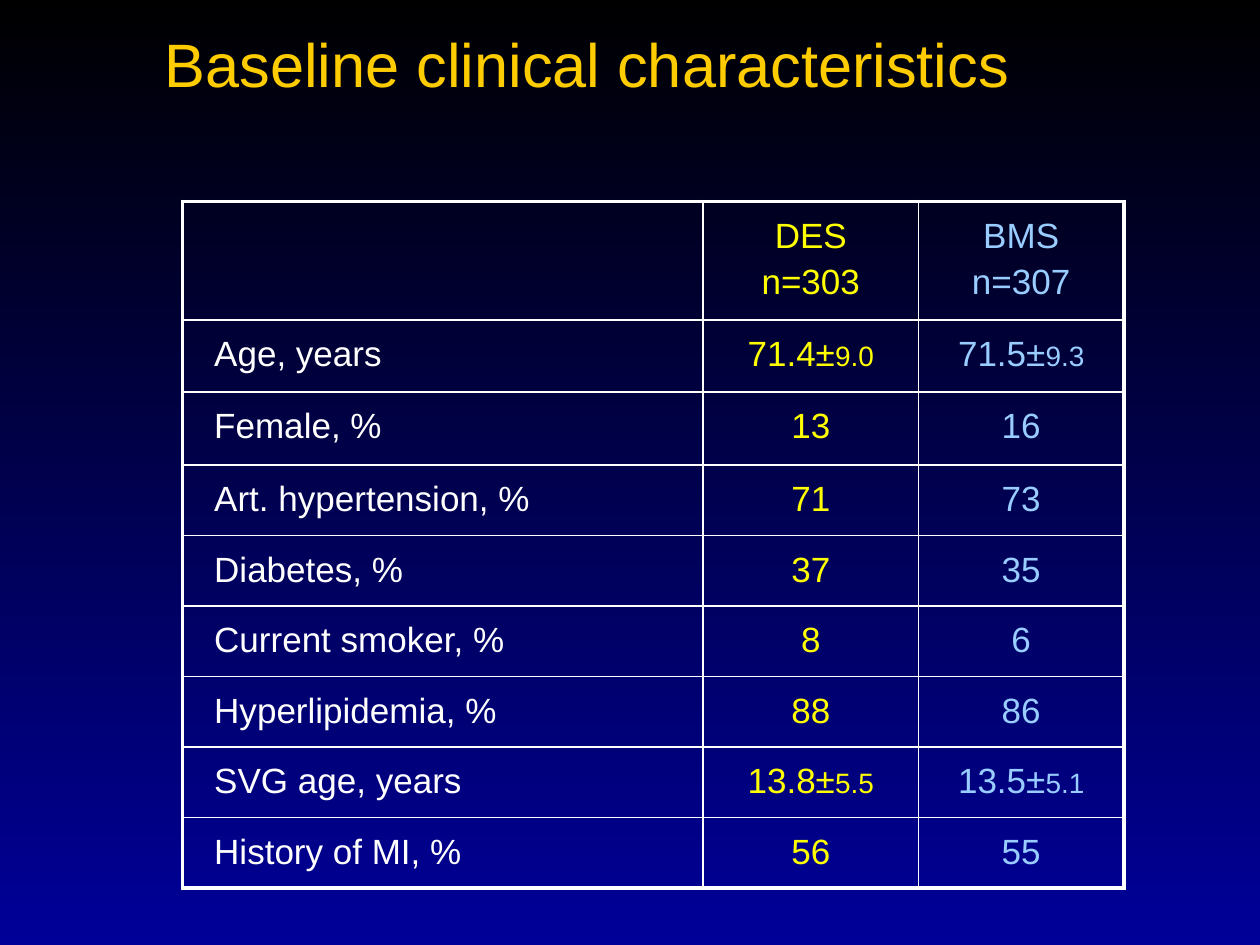
from dataclasses import dataclass

from lxml import etree
from pptx import Presentation
from pptx.dml.color import RGBColor
from pptx.enum import text as t
from pptx.oxml import ns
from pptx.util import Inches, Pt

WHITE, YELLOW, BLUE, GOLD = "FFFFFF", "FFFF00", "99CCFF", "FFCC00"


@dataclass
class Row:
    label: str
    des: str
    bms: str
    high: float = 0.56


ROWS = [
    Row("", "DES\nn=303", "BMS\nn=307", 0.94),
    Row("Age, years", "71.4±9.0", "71.5±9.3", 0.57),
    Row("Female, %", "13", "16", 0.58),
    Row("Art. hypertension, %", "71", "73"),
    Row("Diabetes, %", "37", "35"),
    Row("Current smoker, %", "8", "6"),
    Row("Hyperlipidemia, %", "88", "86"),
    Row("SVG age, years", "13.8±5.5", "13.5±5.1"),
    Row("History of MI, %", "56", "55"),
]
WIDTHS = [4.13, 1.71, 1.63]
TINTS = [WHITE, YELLOW, BLUE]


def color(code: str) -> RGBColor:
    return RGBColor.from_string(code)


def style(font, size: float, code: str) -> None:
    font.name = "Arial"
    font.size = Pt(size)
    font.color.rgb = color(code)


def border(cell, outer: dict) -> None:
    props = cell._tc.get_or_add_tcPr()
    for spot, (side, edge) in enumerate(outer.items()):
        line = etree.Element(ns.qn(f"a:ln{side}"), w=str(Pt(2.25 if edge else 1)))
        fill = etree.SubElement(line, ns.qn("a:solidFill"))
        etree.SubElement(fill, ns.qn("a:srgbClr"), val=WHITE)
        props.insert(spot, line)


def write(cell, words: str, code: str, align) -> None:
    cell.margin_left = cell.margin_right = Inches(0.25)
    cell.margin_top = cell.margin_bottom = Inches(0.12)
    frame = cell.text_frame
    main, sign, spread = words.partition("±")
    frame.text = main + sign
    for spot, para in enumerate(frame.paragraphs):
        para.alignment = align
        if spot:
            para.space_before = Pt(4)
        style(para.font, 20, code)
        for run in para.runs:
            style(run.font, 20, code)
    if spread:
        run = frame.paragraphs[0].add_run()
        run.text = spread
        style(run.font, 16, code)


def draw_table(slide) -> None:
    frame = slide.shapes.add_table(
        len(ROWS), len(WIDTHS), Inches(1.45), Inches(1.6),
        Inches(sum(WIDTHS)), Inches(sum(row.high for row in ROWS)))
    table = frame.table
    table.first_row = table.horz_banding = False
    for col, width in zip(table.columns, WIDTHS):
        col.width = Inches(width)
    for y, row in enumerate(ROWS):
        table.rows[y].height = Inches(row.high)
        for x, words in enumerate([row.label, row.des, row.bms]):
            cell = table.cell(y, x)
            cell.fill.background()
            align = t.PP_ALIGN.CENTER if x else t.PP_ALIGN.LEFT
            write(cell, words, TINTS[x], align)
            border(cell, {"L": x == 0, "R": x == len(WIDTHS) - 1,
                          "T": y == 0, "B": y == len(ROWS) - 1})


def draw_title(slide) -> None:
    title = slide.shapes.title
    title.left, title.top = Inches(0.44), Inches(0.13)
    title.width, title.height = Inches(8.44), Inches(0.74)
    frame = title.text_frame
    frame.text = "Baseline clinical characteristics"
    frame.auto_size = t.MSO_AUTO_SIZE.NONE
    frame.vertical_anchor = t.MSO_ANCHOR.MIDDLE
    para = frame.paragraphs[0]
    para.alignment = t.PP_ALIGN.CENTER
    style(para.runs[0].font, 35, GOLD)


def main() -> None:
    deck = Presentation()
    deck.slide_width, deck.slide_height = Inches(10), Inches(7.5)
    slide = deck.slides.add_slide(deck.slide_layouts[5])
    fill = slide.background.fill
    fill.gradient()
    fill.gradient_angle = 270
    for stop, code in zip(fill.gradient_stops, ["000000", "000099"]):
        stop.color.rgb = color(code)
    draw_table(slide)
    draw_title(slide)
    deck.save("out.pptx")


if __name__ == "__main__":
    main()
